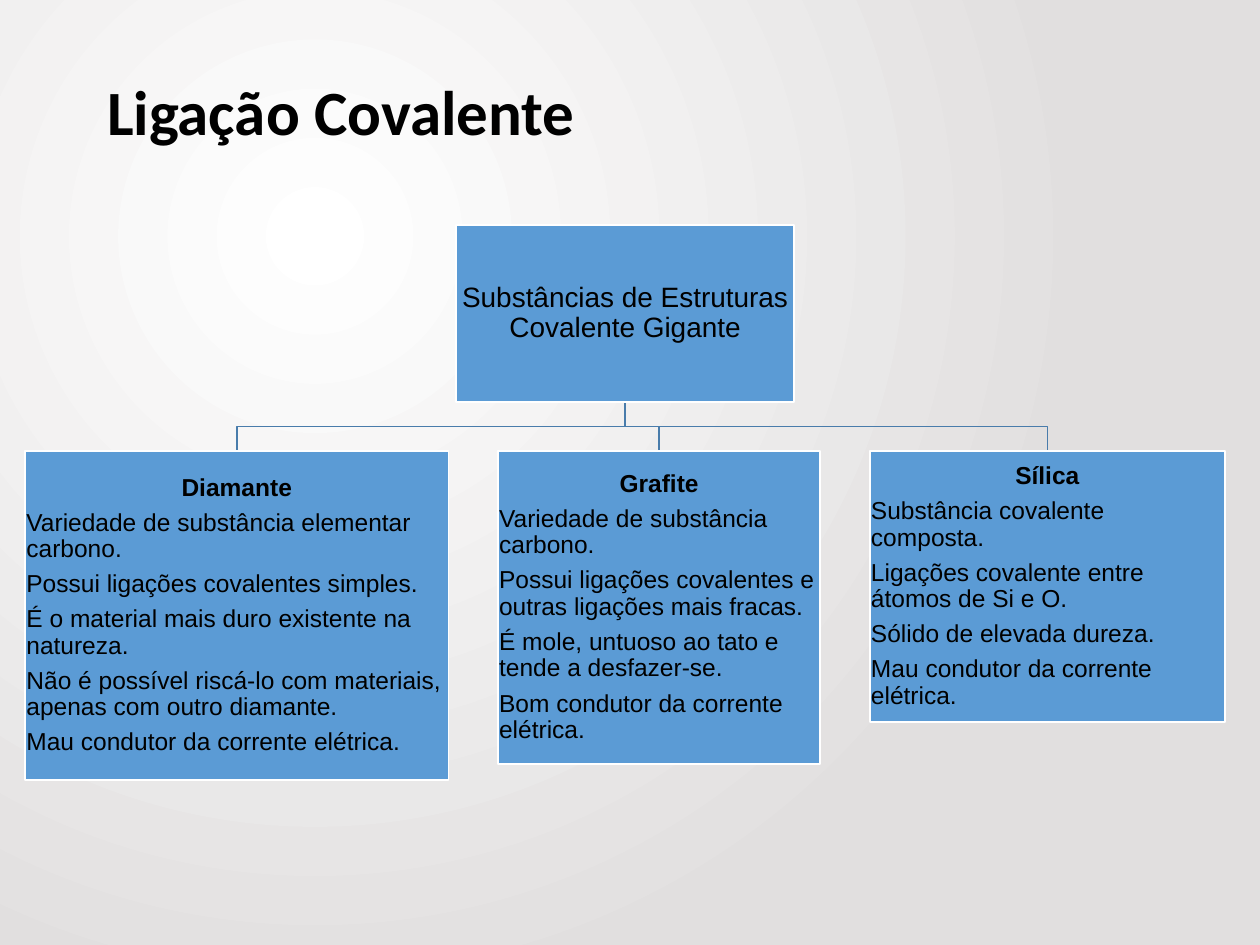
import pptx
import pptx.dml.color
import pptx.enum.shapes
import pptx.enum.text
import pptx.oxml
import pptx.oxml.ns
import pptx.util

Pt = pptx.util.Pt
ALIGN = pptx.enum.text.PP_ALIGN

COLORS = {
    "center": "FFFFFF",
    "edge": "E1DFDF",
    "box": "5B9BD5",
    "outline": "FFFFFF",
    "branch": "497CAB",
    "text": "000000",
}
GAP = 28.2
ROOT_SIZE = (193, 100.8)
ROOT_TEXT = "Substâncias de Estruturas Covalente Gigante"
SUBSTANCES = [
    (241.9, 188, "Diamante", [
        "Variedade de substância elementar carbono.",
        "Possui ligações covalentes simples.",
        "É o material mais duro existente na natureza.",
        "Não é possível riscá-lo com materiais, apenas com outro diamante.",
        "Mau condutor da corrente elétrica.",
    ]),
    (184.3, 178.7, "Grafite", [
        "Variedade de substância carbono.",
        "Possui ligações covalentes e outras ligações mais fracas.",
        "É mole, untuoso ao tato e tende a desfazer-se.",
        "Bom condutor da corrente elétrica.",
    ]),
    (203, 154.8, "Sílica", [
        "Substância covalente composta.",
        "Ligações covalente entre átomos de Si e O.",
        "Sólido de elevada dureza.",
        "Mau condutor da corrente elétrica.",
    ]),
]


def color(name):
    return pptx.dml.color.RGBColor.from_string(COLORS[name])


def paint_background(slide):
    """Radial gradient centred a quarter of the way across and down."""
    fill = slide.background.fill
    fill.gradient()
    for stop, name in zip(fill.gradient_stops, ("center", "edge")):
        stop.color.rgb = color(name)
    gradient = slide.element.find(".//" + pptx.oxml.ns.qn("a:gradFill"))
    linear = gradient.find(pptx.oxml.ns.qn("a:lin"))
    circle = pptx.oxml.parse_xml(
        f'<a:path {pptx.oxml.ns.nsdecls("a")} path="circle">'
        '<a:fillToRect l="50000" t="50000" r="100000" b="100000"/></a:path>')
    gradient.replace(linear, circle)


def add_title(slide, left, top, width, height):
    title = slide.shapes.title
    title.left, title.top, title.width, title.height = map(Pt, (left, top, width, height))
    frame = title.text_frame
    frame.text = "Ligação Covalente"
    frame.auto_size = pptx.enum.text.MSO_AUTO_SIZE.NONE
    paragraph = frame.paragraphs[0]
    paragraph.alignment = ALIGN.LEFT
    paragraph.font.name, paragraph.font.size = "Calibri", Pt(36)
    paragraph.font.bold = True
    paragraph.font.color.rgb = color("text")


def add_branch(slide, start, end):
    """Elbow line that turns halfway down between two points."""
    middle = (start[1] + end[1]) / 2
    points = [tuple(map(Pt, point))
              for point in (start, (start[0], middle), (end[0], middle), end)]
    builder = slide.shapes.build_freeform(*points[0])
    builder.add_line_segments(points[1:], close=False)
    branch = builder.convert_to_shape()
    branch.shadow.inherit = False
    branch.fill.background()
    branch.line.color.rgb = color("branch")
    branch.line.width = Pt(1)


def add_box(slide, left, top, width, height, size, heading, facts=(), bold=False):
    box = slide.shapes.add_shape(
        pptx.enum.shapes.MSO_SHAPE.RECTANGLE, *map(Pt, (left, top, width, height)))
    box.shadow.inherit = False
    box.fill.solid()
    box.fill.fore_color.rgb = color("box")
    box.line.color.rgb = color("outline")
    box.line.width = Pt(1)
    frame = box.text_frame
    frame.word_wrap = True
    frame.vertical_anchor = pptx.enum.text.MSO_ANCHOR.MIDDLE
    frame.margin_left = frame.margin_right = Pt(0.7)
    frame.margin_top = frame.margin_bottom = Pt(0.7)
    frame.text = "\n".join([heading, *facts])
    for index, paragraph in enumerate(frame.paragraphs):
        paragraph.alignment = ALIGN.LEFT if index else ALIGN.CENTER
        paragraph.line_spacing = 0.9
        paragraph.space_after = Pt(0.35 * size)
        paragraph.font.name, paragraph.font.size = "Arial", Pt(size)
        paragraph.font.bold = bold and index == 0
        paragraph.font.color.rgb = color("text")


def add_hierarchy(slide, left, top):
    """Root box centred over a row of evenly spaced substance boxes."""
    root_width, root_height = ROOT_SIZE
    row_width = sum(item[0] for item in SUBSTANCES) + GAP * (len(SUBSTANCES) - 1)
    center = left + row_width / 2
    root_bottom = top + root_height
    row_top = root_bottom + GAP
    box_left = left
    for width, height, heading, facts in SUBSTANCES:
        add_branch(slide, (center, root_bottom), (box_left + width / 2, row_top))
        add_box(slide, box_left, row_top, width, height, 14, heading, facts, bold=True)
        box_left += width + GAP
    add_box(slide, center - root_width / 2, top, root_width, root_height, 16, ROOT_TEXT)


def main():
    presentation = pptx.Presentation()
    presentation.slide_width, presentation.slide_height = Pt(720), Pt(540)
    slide = presentation.slides.add_slide(presentation.slide_layouts[5])
    paint_background(slide)
    add_title(slide, 54, 37.5, 342, 51)
    add_hierarchy(slide, 14.4, 128.8)
    presentation.save("out.pptx")


if __name__ == "__main__":
    main()
